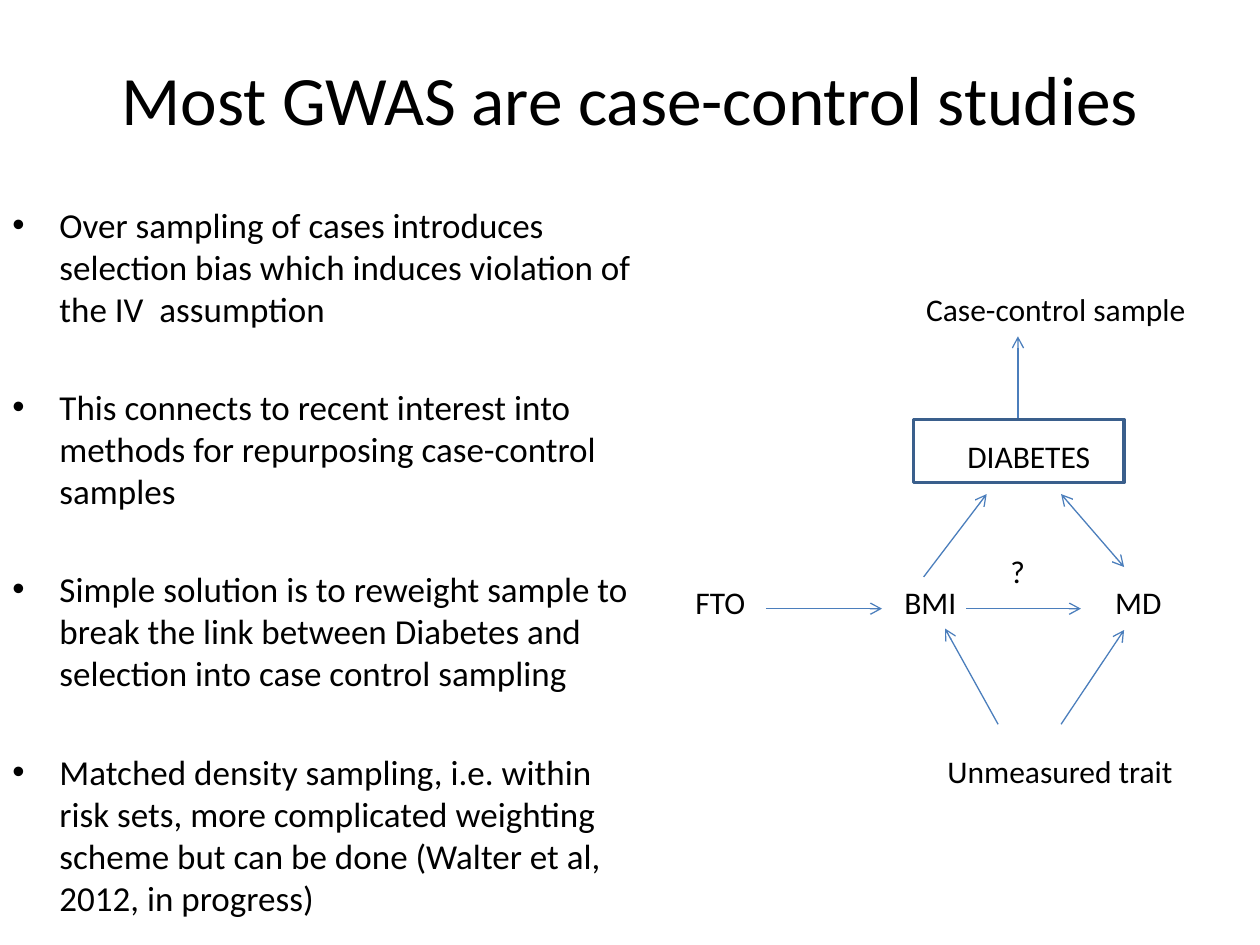
from lxml import etree
from pptx import Presentation
from pptx import util as u
from pptx.dml.color import RGBColor
from pptx.enum import shapes, text
from pptx.oxml.ns import qn

FONT = "Calibri"
BLACK, ARROW_BLUE, FRAME_BLUE = "000000", "4B7EBC", "3A5F8C"

POINTS = [
    "Over sampling of cases introduces selection bias which induces violation of the IV  assumption",
    "This connects to recent interest into methods for repurposing case-control samples",
    "Simple solution is to reweight sample to break the link between Diabetes and "
    "selection into case control sampling",
    "Matched density sampling, i.e. within risk sets, more complicated weighting scheme "
    "but can be done (Walter et al, 2012, in progress)",
]

LABELS = [
    ("FTO", 13.77, 11.63, 1.52),
    ("BMI", 17.98, 11.63, 2.11),
    ("MD", 22.23, 11.63, 1.45),
    ("?", 20.12, 11, 0.81),
    ("DIABETES", 19.25, 8.69, 5.51),
    ("Case-control sample", 18.42, 5.72, 6.35),
    ("Unmeasured trait", 18.85, 15.04, 5.11),
]

ARROWS = [
    ((15.44, 12.27), (17.78, 12.27)),
    ((19.48, 12.27), (21.79, 12.27)),
    ((21.39, 14.6), (22.66, 12.7)),
    ((20.12, 14.6), (19.05, 12.67)),
    ((18.62, 11.63), (19.89, 9.96)),
    ((20.52, 8.46), (20.52, 6.78)),
]
TWO_WAY_ARROW = ((21.39, 9.96), (22.66, 11.43))


def color(value):
    """Turn a hex string into a colour."""
    return RGBColor.from_string(value)


def write(paragraph, content, size=18, align=text.PP_ALIGN.LEFT):
    """Fill a paragraph with formatted text."""
    run = paragraph.add_run()
    run.text = content
    run.font.name = FONT
    run.font.size = u.Pt(size)
    run.font.color.rgb = color(BLACK)
    paragraph.alignment = align


def add_title(slide, content):
    """Place the slide title."""
    title = slide.shapes.title
    title.left, title.top = u.Cm(1.27), u.Cm(0.76)
    title.width, title.height = u.Cm(22.86), u.Cm(3.18)
    frame = title.text_frame
    frame.auto_size = text.MSO_AUTO_SIZE.NONE
    frame.vertical_anchor = text.MSO_ANCHOR.MIDDLE
    frame.margin_bottom = u.Cm(0.9)
    write(frame.paragraphs[0], content, size=39.6, align=text.PP_ALIGN.CENTER)


def set_bullet(paragraph, indent):
    """Give a paragraph a hanging round bullet."""
    properties = paragraph._p.get_or_add_pPr()
    properties.set("marL", str(indent))
    properties.set("indent", str(-indent))
    etree.SubElement(properties, qn("a:buFont"), typeface="Arial")
    etree.SubElement(properties, qn("a:buChar"), char="•")


def add_points(slide, points):
    """Add the bulleted list."""
    box = slide.shapes.add_textbox(u.Cm(0), u.Cm(2.97), u.Cm(13.34), u.Cm(14.81))
    frame = box.text_frame
    frame.word_wrap = True
    frame.margin_top = u.Cm(1.14)
    for index, point in enumerate(points):
        paragraph = frame.add_paragraph() if index else frame.paragraphs[0]
        set_bullet(paragraph, u.Cm(0.95))
        paragraph.line_spacing = u.Pt(24)
        if index:
            paragraph.space_before = u.Pt(32)
        write(paragraph, point, size=20)


def add_label(slide, content, left, top, width):
    """Add a one-line diagram label."""
    box = slide.shapes.add_textbox(u.Cm(left), u.Cm(top), u.Cm(width), u.Cm(1.02))
    box.text_frame.word_wrap = False
    write(box.text_frame.paragraphs[0], content)


def add_arrow(slide, start, end, two_way=False):
    """Add a thin line with open arrowheads."""
    arrow = slide.shapes.add_connector(
        shapes.MSO_CONNECTOR.STRAIGHT, *(u.Cm(value) for value in start + end))
    arrow.line.color.rgb = color(ARROW_BLUE)
    arrow.line.width = u.Pt(0.75)
    line = arrow.line._get_or_add_ln()
    for tag in ["a:headEnd", "a:tailEnd"] if two_way else ["a:tailEnd"]:
        etree.SubElement(line, qn(tag), type="arrow")
    etree.SubElement(arrow._element.spPr, qn("a:effectLst"))


def add_frame(slide, left, top, width, height):
    """Add an unfilled rectangle."""
    frame = slide.shapes.add_shape(
        shapes.MSO_SHAPE.RECTANGLE, u.Cm(left), u.Cm(top), u.Cm(width), u.Cm(height))
    frame.shadow.inherit = False
    frame.fill.background()
    frame.line.color.rgb = color(FRAME_BLUE)
    frame.line.width = u.Pt(2)


def main():
    """Build and save the slide."""
    presentation = Presentation()
    presentation.slide_width, presentation.slide_height = u.Cm(25.4), u.Cm(19.05)
    slide = presentation.slides.add_slide(presentation.slide_layouts[5])
    add_title(slide, "Most GWAS are case-control studies")
    add_points(slide, POINTS)
    for start, end in ARROWS:
        add_arrow(slide, start, end)
    for label in LABELS:
        add_label(slide, *label)
    add_frame(slide, 18.42, 8.46, 4.24, 1.27)
    add_arrow(slide, *TWO_WAY_ARROW, two_way=True)
    presentation.save("out.pptx")


if __name__ == "__main__":
    main()
